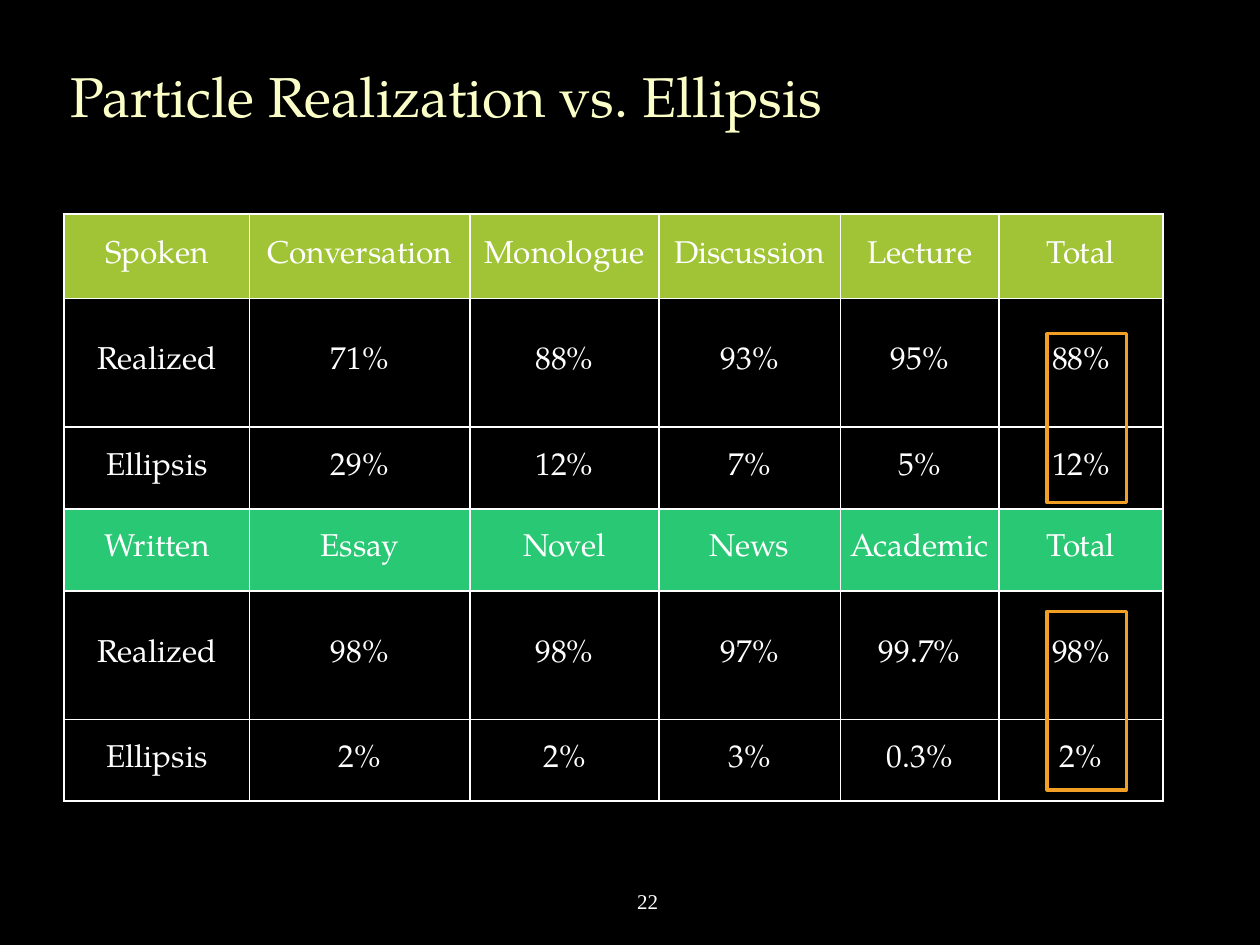
from dataclasses import dataclass

from lxml import etree
from pptx import Presentation
from pptx.dml.color import RGBColor
from pptx.enum.shapes import MSO_SHAPE
from pptx.enum.text import MSO_ANCHOR, PP_ALIGN
from pptx.oxml.ns import qn
from pptx.util import Inches, Pt

RECTANGLE = MSO_SHAPE.RECTANGLE
MIDDLE = MSO_ANCHOR.MIDDLE
LEFT, CENTER = PP_ALIGN.LEFT, PP_ALIGN.CENTER
TITLE_ONLY = 5
GRID_COLUMNS, GRID_ROWS = 100, 75


@dataclass(frozen=True)
class Theme:
    background: str = "000000"
    title: str = "FBFEC6"
    text: str = "FFFFFF"
    spoken: str = "A0C435"
    written: str = "28C874"
    highlight: str = "F29F26"
    font: str = "TeX Gyre Pagella"
    number_font: str = "Times New Roman"
    title_size: float = 32
    table_size: float = 18
    number_size: float = 12
    border_width: float = 1
    highlight_width: float = 1.75


class SlideBuilder:
    """Places styled elements on a grid of 100 columns by 75 rows."""

    def __init__(self, deck, theme):
        self.theme = theme
        self.column = deck.slide_width / GRID_COLUMNS
        self.row = deck.slide_height / GRID_ROWS
        self.slide = deck.slides.add_slide(deck.slide_layouts[TITLE_ONLY])
        self.paint(self.slide.background.fill, theme.background)

    def paint(self, fill, color):
        fill.solid()
        fill.fore_color.rgb = RGBColor.from_string(color)

    def area(self, left, top, width, height):
        return (round(left * self.column), round(top * self.row),
                round(width * self.column), round(height * self.row))

    def set_text(self, frame, text, font, size, color, align):
        frame.text = text
        frame.word_wrap = True
        frame.vertical_anchor = MIDDLE
        paragraph = frame.paragraphs[0]
        paragraph.alignment = align
        paragraph.font.name = font
        paragraph.font.size = Pt(size)
        paragraph.font.color.rgb = RGBColor.from_string(color)

    def title(self, text, *area):
        heading = self.slide.shapes.title
        heading.left, heading.top, heading.width, heading.height = self.area(*area)
        self.set_text(heading.text_frame, text, self.theme.font,
                      self.theme.title_size, self.theme.title, LEFT)
        heading.text_frame.margin_left = round(2.1 * self.column)

    def page_number(self, text, *area):
        box = self.slide.shapes.add_textbox(*self.area(*area))
        self.set_text(box.text_frame, text, self.theme.number_font,
                      self.theme.number_size, self.theme.text, CENTER)

    def table(self, left, top, widths, heights, records, header_fills):
        area = self.area(left, top, sum(widths), sum(heights))
        table = self.slide.shapes.add_table(len(heights), len(widths), *area).table
        for column, width in zip(table.columns, widths):
            column.width = round(width * self.column)
        for row, height in zip(table.rows, heights):
            row.height = round(height * self.row)
        for r, record in enumerate(records):
            for c, text in enumerate(record):
                self.cell(table.cell(r, c), text, header_fills.get(record[0]))

    def cell(self, cell, text, fill):
        self.set_text(cell.text_frame, text, self.theme.font,
                      self.theme.table_size, self.theme.text, CENTER)
        cell.vertical_anchor = MIDDLE
        cell.margin_left = cell.margin_right = round(0.7 * self.column)
        cell.margin_top = cell.margin_bottom = 0
        self.borders(cell)
        if fill:
            self.paint(cell.fill, fill)
        else:
            cell.fill.background()

    def borders(self, cell):
        properties = cell._tc.get_or_add_tcPr()
        for side in ("a:lnL", "a:lnR", "a:lnT", "a:lnB"):
            line = etree.SubElement(properties, qn(side),
                                    w=str(Pt(self.theme.border_width)))
            fill = etree.SubElement(line, qn("a:solidFill"))
            etree.SubElement(fill, qn("a:srgbClr"), val=self.theme.text)

    def highlight(self, *area):
        frame = self.slide.shapes.add_shape(RECTANGLE, *self.area(*area))
        frame.shadow.inherit = False
        frame.fill.background()
        frame.line.color.rgb = RGBColor.from_string(self.theme.highlight)
        frame.line.width = Pt(self.theme.highlight_width)


def main():
    deck = Presentation()
    deck.slide_width, deck.slide_height = Inches(10), Inches(7.5)
    theme = Theme()
    page = SlideBuilder(deck, theme)

    # Heading and page number
    page.title("Particle Realization vs. Ellipsis", 3.5, 2.1, 96.5, 10.9)
    page.page_number("22", 45.3, 69.5, 12.2, 4)

    # Particle shares by genre: a spoken block above a written one
    genre_shares = [
        ("Spoken", "Conversation", "Monologue", "Discussion", "Lecture", "Total"),
        ("Realized", "71%", "88%", "93%", "95%", "88%"),
        ("Ellipsis", "29%", "12%", "7%", "5%", "12%"),
        ("Written", "Essay", "Novel", "News", "Academic", "Total"),
        ("Realized", "98%", "98%", "97%", "99.7%", "98%"),
        ("Ellipsis", "2%", "2%", "3%", "0.3%", "2%"),
    ]
    page.table(5.1, 17, (14.7, 17.5, 15, 14.4, 12.6, 13),
               (6.7, 10.2, 6.5, 6.5, 10.2, 6.5), genre_shares,
               {"Spoken": theme.spoken, "Written": theme.written})

    # Frames around the totals of each block
    for top, height in ((26.5, 13.4), (48.5, 14.2)):
        page.highlight(83.1, top, 6.3, height)

    deck.save("out.pptx")


if __name__ == "__main__":
    main()
